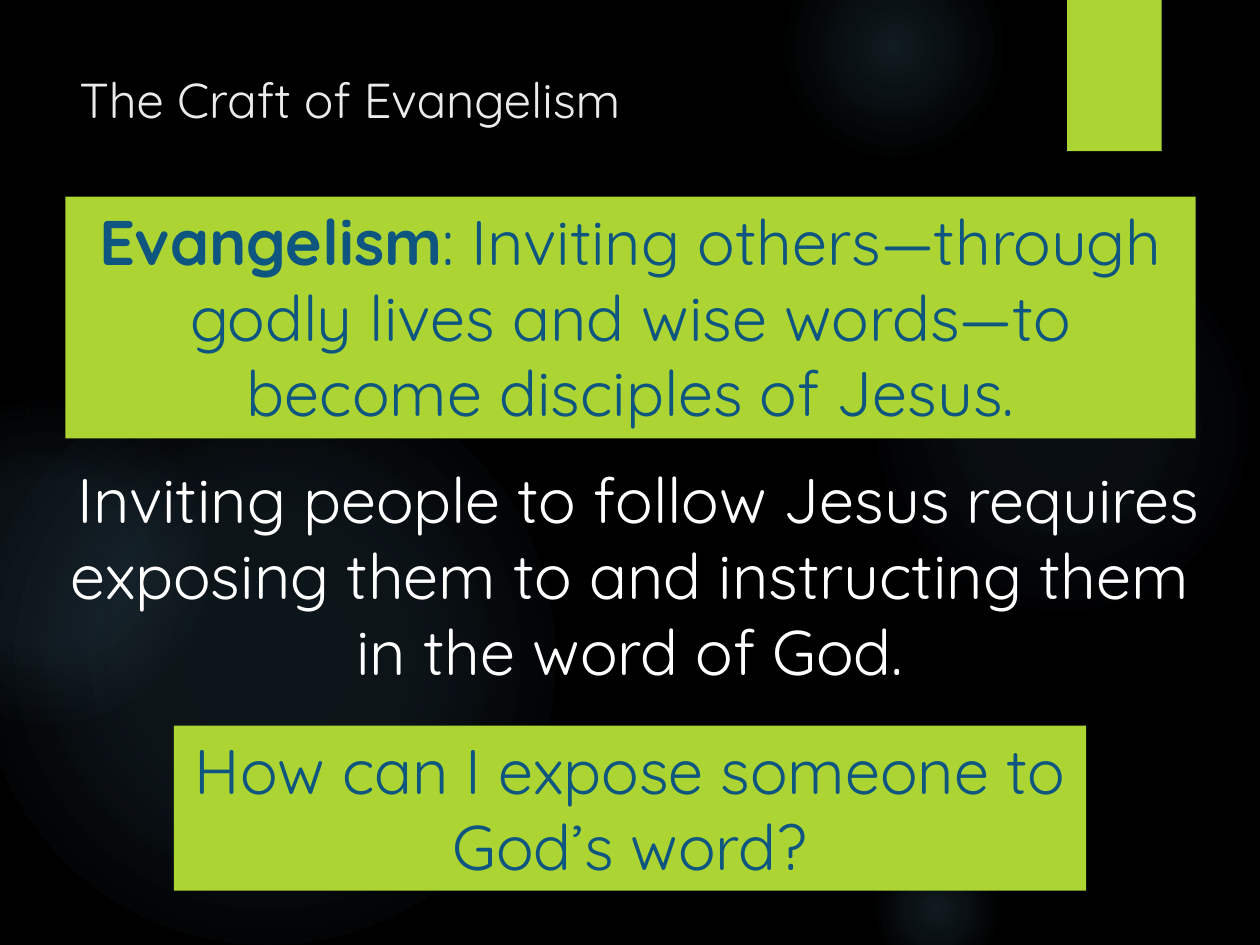
from typing import NamedTuple

from lxml.etree import SubElement
from pptx import Presentation
from pptx.dml.color import RGBColor
from pptx.enum.shapes import MSO_SHAPE
from pptx.enum.text import MSO_ANCHOR, PP_ALIGN
from pptx.oxml.ns import qn
from pptx.util import Inches, Pt

FONT = "Quicksand"
COLORS = {
    "background": "000000",
    "glow": "7AC4F0",
    "lime": "ACD433",
    "blue": "0E5580",
    "title": "EBEBEB",
    "white": "FFFFFF",
}


class Glow(NamedTuple):
    left: float
    top: float
    size: float
    center_alpha: int
    middle_alpha: int
    fade_end: int


class Panel(NamedTuple):
    left: float
    top: float
    width: float
    height: float
    bold: str
    text: str


GLOWS = [
    Glow(6.89, 1.83, 3.08, 7, 6, 69),
    Glow(6.22, -0.5, 1.75, 14, 7, 73),
    Glow(6.89, 6.67, 1.08, 14, 7, 66),
    Glow(-0.17, 2.92, 4.58, 11, 10, 75),
    Glow(-0.92, 3.17, 2.58, 8, 8, 72),
]
PANELS = [
    Panel(1.38, 5.76, 7.24, 1.31, "", "How can I expose someone to God’s word?"),
    Panel(0.52, 1.56, 8.97, 1.92, "Evangelism",
          ": Inviting others—through godly lives and wise words—to become disciples of Jesus."),
]


def rgb(name: str) -> RGBColor:
    return RGBColor.from_string(COLORS[name])


def add_plain_shape(s, kind, left: float, top: float, width: float, height: float):
    sp = s.shapes.add_shape(kind, Inches(left), Inches(top), Inches(width), Inches(height))
    sp.shadow.inherit = False
    sp.line.fill.background()
    return sp


def add_rectangle(s, left: float, top: float, width: float, height: float):
    sp = add_plain_shape(s, MSO_SHAPE.RECTANGLE, left, top, width, height)
    sp.fill.solid()
    sp.fill.fore_color.rgb = rgb("lime")
    return sp


def add_glow(s, glow: Glow) -> None:
    """Draw a circle whose radial gradient fades to fully transparent."""
    sp = add_plain_shape(s, MSO_SHAPE.OVAL, glow.left, glow.top, glow.size, glow.size)
    sp.fill.gradient()
    grad = sp._element.spPr.find(qn("a:gradFill"))
    for child in list(grad):
        grad.remove(child)
    stops = SubElement(grad, qn("a:gsLst"))
    for pos, alpha in ((0, glow.center_alpha), (36, glow.middle_alpha), (glow.fade_end, 0)):
        stop = SubElement(stops, qn("a:gs"), pos=str(pos * 1000))
        color = SubElement(stop, qn("a:srgbClr"), val=COLORS["glow"])
        SubElement(color, qn("a:alpha"), val=str(alpha * 1000))
    circle = SubElement(grad, qn("a:path"), path="circle")
    SubElement(circle, qn("a:fillToRect"), l="50000", t="50000", r="50000", b="50000")


def add_shadow(sp) -> None:
    effects = sp._element.spPr.find(qn("a:effectLst"))
    shadow = SubElement(effects, qn("a:outerShdw"), blurRad=str(Pt(3)), dist=str(Pt(2)),
                        dir="5400000", rotWithShape="0")
    color = SubElement(shadow, qn("a:srgbClr"), val="000000")
    SubElement(color, qn("a:alpha"), val="45000")


def format_text(tf, size: int, color: str, align: PP_ALIGN) -> None:
    tf.word_wrap = True
    tf.vertical_anchor = MSO_ANCHOR.TOP
    for p in tf.paragraphs:
        p.alignment = align
        for r in p.runs:
            r.font.name = FONT
            r.font.size = Pt(size)
            r.font.color.rgb = rgb(color)


def add_panel(s, panel: Panel) -> None:
    sp = add_rectangle(s, panel.left, panel.top, panel.width, panel.height)
    p = sp.text_frame.paragraphs[0]
    if panel.bold:
        r = p.add_run()
        r.text = panel.bold
        r.font.bold = True
    p.add_run().text = panel.text
    format_text(sp.text_frame, 36, "blue", PP_ALIGN.CENTER)


def add_title(s, text: str) -> None:
    title = s.shapes.title
    title.left, title.top = Inches(0.53), Inches(0.5)
    title.width, title.height = Inches(4.72), Inches(0.62)
    title.text_frame.text = text
    format_text(title.text_frame, 28, "title", PP_ALIGN.LEFT)


def add_body(s, text: str) -> None:
    tf = s.shapes.add_textbox(Inches(0.33), Inches(3.61), Inches(9.34), Inches(2.03)).text_frame
    tf.text = text
    tf.paragraphs[0].space_before = Pt(10)
    format_text(tf, 36, "white", PP_ALIGN.CENTER)


def main() -> None:
    prs = Presentation()
    prs.slide_width, prs.slide_height = Inches(10), Inches(7.5)
    s = prs.slides.add_slide(prs.slide_layouts[5])
    s.background.fill.solid()
    s.background.fill.fore_color.rgb = rgb("background")

    for glow in GLOWS:
        add_glow(s, glow)
    add_shadow(add_rectangle(s, 8.47, 0, 0.75, 1.2))
    add_title(s, "The Craft of Evangelism")
    add_body(s, " Inviting people to follow Jesus requires exposing them to "
                "and instructing them in the word of God.")
    for panel in PANELS:
        add_panel(s, panel)
    prs.save("out.pptx")


if __name__ == "__main__":
    main()
